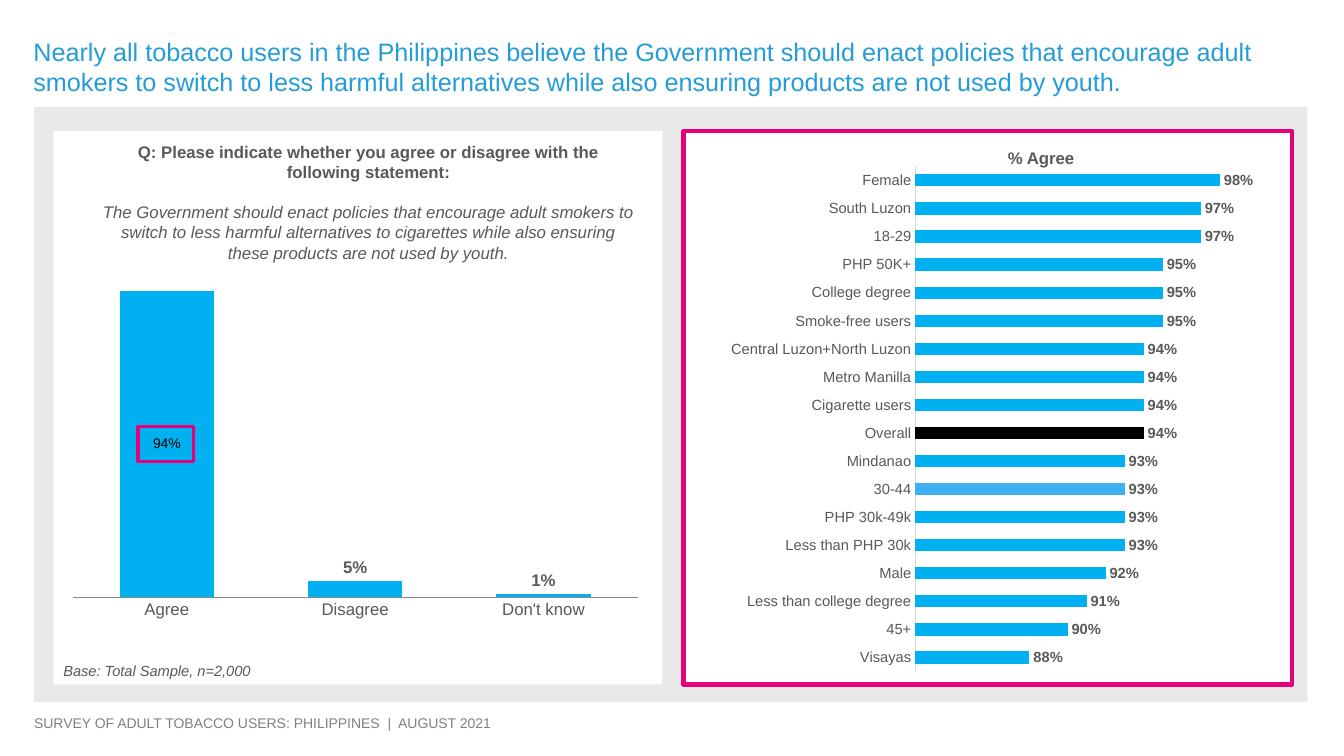
from lxml.etree import SubElement
from pptx import Presentation
from pptx.chart.data import CategoryChartData
from pptx.dml.color import RGBColor
from pptx.enum.chart import XL_CHART_TYPE as ChartType
from pptx.enum.chart import XL_LABEL_POSITION as LabelPos
from pptx.enum.chart import XL_TICK_MARK as Tick
from pptx.enum.shapes import MSO_SHAPE as Shape
from pptx.enum.text import MSO_ANCHOR as Anchor
from pptx.enum.text import PP_ALIGN as Align
from pptx.oxml import parse_xml
from pptx.oxml.ns import nsdecls, qn
from pptx.util import Pt

COLORS = {
    "title": "249CD8", "text": "595959", "footer": "808080",
    "backdrop": "E9E9E9", "panel": "FFFFFF", "accent": "E40079",
    "bar": "00B0F0", "bar_light": "3CB0F0", "overall": "000000",
    "axis": "898989", "axis_light": "D9D9D9",
}
FONT = "Arial"

STATEMENT = ("The Government should enact policies that encourage adult smokers to switch "
             "to less harmful alternatives to cigarettes while also ensuring these products "
             "are not used by youth.")
RESPONSES = {"Agree": 0.94, "Disagree": 0.05, "Don't know": 0.01}
AGREEMENT = {
    "Visayas": 0.88, "45+": 0.90, "Less than college degree": 0.91, "Male": 0.92,
    "Less than PHP 30k": 0.93, "PHP 30k-49k": 0.93, "30-44": 0.93, "Mindanao": 0.93,
    "Overall": 0.94, "Cigarette users": 0.94, "Metro Manilla": 0.94,
    "Central Luzon+North Luzon": 0.94, "Smoke-free users": 0.95, "College degree": 0.95,
    "PHP 50K+": 0.95, "18-29": 0.97, "South Luzon": 0.97, "Female": 0.98,
}
SPECIAL_BARS = {"30-44": "bar_light", "Overall": "overall"}


def rgb(name):
    return RGBColor.from_string(COLORS[name])


def style_font(font, size, color="text", bold=False, italic=False):
    font.name, font.size, font.bold, font.italic = FONT, Pt(size), bold, italic
    font.color.rgb = rgb(color)


def add_rect(slide, box, fill=None, line=None, weight=0):
    rect = slide.shapes.add_shape(Shape.RECTANGLE, *map(Pt, box))
    rect.shadow.inherit = False
    if fill:
        rect.fill.solid()
        rect.fill.fore_color.rgb = rgb(fill)
    else:
        rect.fill.background()
    if line:
        rect.line.color.rgb = rgb(line)
        rect.line.width = Pt(weight)
    else:
        rect.line.fill.background()


def add_text(slide, box, paragraphs, align=Align.LEFT, gap=0):
    """Each paragraph is (text, font settings); gap is the space between them."""
    frame = slide.shapes.add_textbox(*map(Pt, box)).text_frame
    frame.word_wrap = True
    for i, (text, font) in enumerate(paragraphs):
        paragraph = frame.add_paragraph() if i else frame.paragraphs[0]
        paragraph.text = text
        paragraph.alignment = align
        paragraph.space_before = Pt(gap if i else 0)
        style_font(paragraph.font, **font)


def add_bars(slide, box, kind, values, plot_area, scale, gap, size, axis_color):
    data = CategoryChartData(number_format="0%")
    data.categories = list(values)
    data.add_series("Series 1", list(values.values()))
    chart = slide.shapes.add_chart(kind, *map(Pt, box), data).chart
    chart.has_legend = chart.has_title = False
    style_font(chart.font, size)

    # Axes
    chart.value_axis.minimum_scale, chart.value_axis.maximum_scale = scale
    chart.value_axis.has_major_gridlines = False
    chart.value_axis.visible = False
    groups = chart.category_axis
    groups.major_tick_mark = Tick.NONE
    groups.format.line.color.rgb = rgb(axis_color)
    groups.format.line.width = Pt(0.75)
    style_font(groups.tick_labels.font, size)

    # Bars and labels
    chart.plots[0].gap_width = gap
    chart.plots[0].vary_by_categories = False
    series = chart.plots[0].series[0]
    series.format.fill.solid()
    series.format.fill.fore_color.rgb = rgb("bar")
    labels = series.data_labels
    labels.show_value = True
    labels.number_format, labels.number_format_is_linked = "0%", False
    labels.position = LabelPos.OUTSIDE_END
    style_font(labels.font, size, bold=True)

    # Transparent background and fixed inner plot area
    space = chart.element
    space.find(qn("c:chart")).addnext(parse_xml(
        f'<c:spPr {nsdecls("c", "a")}><a:noFill/><a:ln><a:noFill/></a:ln></c:spPr>'))
    plot = space.find(".//" + qn("c:plotArea"))
    for layout in plot.findall(qn("c:layout")):
        plot.remove(layout)
    layout = parse_xml(f'<c:layout {nsdecls("c")}><c:manualLayout/></c:layout>')
    settings = dict(layoutTarget="inner", xMode="edge", yMode="edge")
    settings.update(zip("xywh", plot_area))
    for tag, value in settings.items():
        SubElement(layout[0], qn("c:" + tag)).set("val", str(value))
    plot.insert(0, layout)
    return series


def add_headline(slide, box):
    title = slide.shapes.title
    title.left, title.top, title.width, title.height = map(Pt, box)
    frame = title.text_frame
    frame.word_wrap = True
    frame.vertical_anchor = Anchor.TOP
    frame.text = ("Nearly all tobacco users in the Philippines believe the Government should "
                  "enact policies that encourage adult smokers to switch to less harmful "
                  "alternatives while also ensuring products are not used by youth.")
    frame.paragraphs[0].alignment = Align.LEFT
    style_font(frame.paragraphs[0].font, 18, "title")


def add_question_panel(slide, box):
    left, top, width, height = box
    add_rect(slide, box, "panel")
    add_text(slide, (left + 27.4, top + 4.3, 395.3, 94.3), [
        ("Q: Please indicate whether you agree or disagree with the following statement:",
         dict(size=12, bold=True)),
        (STATEMENT, dict(size=12, italic=True)),
    ], Align.CENTER, gap=14)
    series = add_bars(slide, (left + 0.7, top + 1.4, width - 2.2, 360),
                      ChartType.COLUMN_CLUSTERED, RESPONSES,
                      (0.03, 0.275, 0.933, 0.646), (0, 1), 100, 12, "axis")
    agree_label = series.points[0].data_label
    style_font(agree_label.font, 10, "overall")
    agree_label.position = LabelPos.CENTER
    add_rect(slide, (left + 60.4, top + 211, 39.6, 25.2), line="accent", weight=2.25)
    add_text(slide, (left, top + height - 19.5, 335, 21),
             [("Base: Total Sample, n=2,000", dict(size=10.5, italic=True))])


def add_agreement_panel(slide, box):
    left, top, width, height = box
    add_rect(slide, box, "panel", "accent", 3)
    add_text(slide, (left + 224.6, top + 8.6, 75.6, 21.6),
             [("% Agree", dict(size=12, bold=True))])
    series = add_bars(slide, (left + 2.2, top, width - 1.5, height),
                      ChartType.BAR_CLUSTERED, AGREEMENT,
                      (0.377, 0.064, 0.565, 0.913), (0.82, 1), 130, 10.5, "axis_light")
    for i, group in enumerate(AGREEMENT):
        if group in SPECIAL_BARS:
            fill = series.points[i].format.fill
            fill.solid()
            fill.fore_color.rgb = rgb(SPECIAL_BARS[group])


def main():
    prs = Presentation()
    prs.slide_width, prs.slide_height = Pt(960), Pt(540)
    slide = prs.slides.add_slide(prs.slide_layouts.get_by_name("Title Only"))

    add_rect(slide, (24.5, 76.3, 909.4, 425.2), "backdrop")
    add_text(slide, (17.3, 506.9, 895, 19.4),
             [("SURVEY OF ADULT TOBACCO USERS: PHILIPPINES\u00a0 |\u00a0 AUGUST 2021".replace("\u00a0", " "),
               dict(size=10, color="footer"))])
    add_headline(slide, (16.6, 22, 919.4, 51.4))
    add_question_panel(slide, (38.2, 93.6, 434.9, 395.3))
    add_agreement_panel(slide, (488.2, 93.6, 434.9, 395.3))
    prs.save("out.pptx")


if __name__ == "__main__":
    main()
